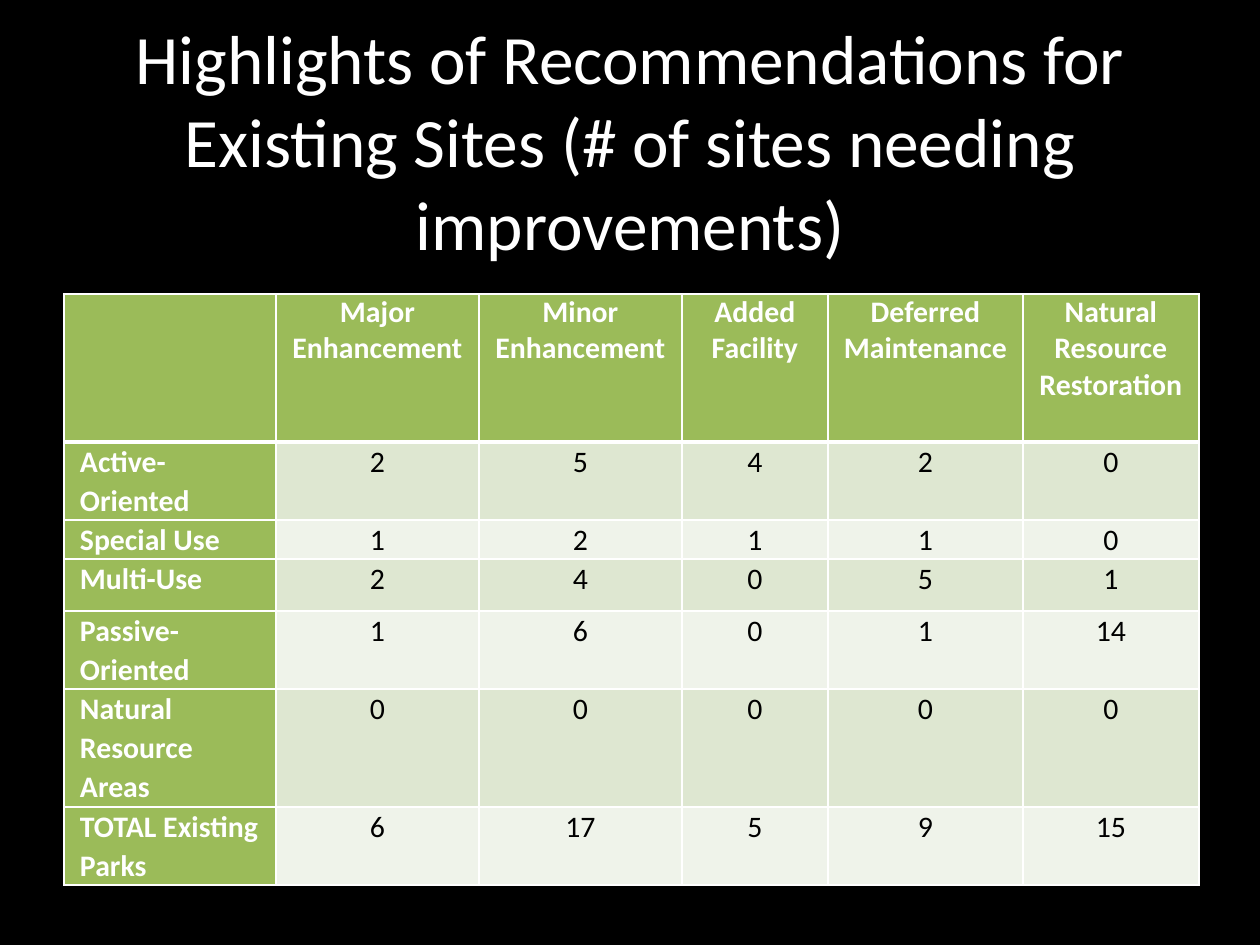
import pptx
import pptx.util
import pptx.dml.color
import pptx.enum.text
import pptx.oxml
import pptx.oxml.ns

RGBColor = pptx.dml.color.RGBColor
BLACK = RGBColor(0x00, 0x00, 0x00)
WHITE = RGBColor(0xFF, 0xFF, 0xFF)
GREEN = RGBColor(0x9B, 0xBB, 0x59)
BANDS = [RGBColor(0xDE, 0xE7, 0xD1), RGBColor(0xEF, 0xF3, 0xEA)]

LEFT = pptx.enum.text.PP_ALIGN.LEFT
CENTER = pptx.enum.text.PP_ALIGN.CENTER
MIDDLE = pptx.enum.text.MSO_ANCHOR.MIDDLE
NO_AUTOFIT = pptx.enum.text.MSO_AUTO_SIZE.NONE

PX = 914400 // 126
COL_WIDTHS = [212, 203, 203, 146, 195, 176]
ROW_HEIGHTS = [148, 78, 39, 52, 78, 118, 78]
ROWS = [
    ["", "Major Enhancement", "Minor Enhancement", "Added Facility",
     "Deferred Maintenance", "Natural Resource Restoration"],
    ["Active-Oriented", 2, 5, 4, 2, 0],
    ["Special Use", 1, 2, 1, 1, 0],
    ["Multi-Use", 2, 4, 0, 5, 1],
    ["Passive-Oriented", 1, 6, 0, 1, 14],
    ["Natural Resource Areas", 0, 0, 0, 0, 0],
    ["TOTAL Existing Parks", 6, 17, 5, 9, 15],
]


def px(n):
    return pptx.util.Emu(n * PX)


def write(tf, text, size=17, color=BLACK, bold=False, align=CENTER, spacing=None):
    p = tf.paragraphs[0]
    p.alignment = align
    if spacing:
        p.line_spacing = spacing
    r = p.add_run()
    r.text = text
    r.font.name = "Calibri"
    r.font.size = pptx.util.Pt(size)
    r.font.bold = bold
    r.font.color.rgb = color


def add_border(cell, side, width):
    ns = pptx.oxml.ns.nsdecls("a")
    cell._tc.get_or_add_tcPr().append(pptx.oxml.parse_xml(
        f'<a:ln{side} {ns} w="{pptx.util.Pt(width)}"><a:solidFill>'
        f'<a:srgbClr val="{WHITE}"/></a:solidFill></a:ln{side}>'))


class Deck:
    def __init__(self):
        self.prs = pptx.Presentation()
        self.prs.slide_width = px(1260)
        self.prs.slide_height = px(945)

    def add_slide(self):
        self.s = self.prs.slides.add_slide(self.prs.slide_layouts[5])
        fill = self.s.background.fill
        fill.solid()
        fill.fore_color.rgb = BLACK

    def title(self, text, x, y, w, h):
        sp = self.s.shapes.title
        sp.left, sp.top, sp.width, sp.height = map(px, (x, y, w, h))
        tf = sp.text_frame
        tf.word_wrap = True
        tf.auto_size = NO_AUTOFIT
        tf.vertical_anchor = MIDDLE
        write(tf, text, size=39.6, color=WHITE)

    def table(self, rows, x, y, widths, heights):
        table = self.s.shapes.add_table(
            len(rows), len(widths), px(x), px(y),
            px(sum(widths)), px(sum(heights))).table
        for col, w in zip(table.columns, widths):
            col.width = px(w)
        for row, h in zip(table.rows, heights):
            row.height = px(h)
        for i, values in enumerate(rows):
            for j, value in enumerate(values):
                self.cell(table.cell(i, j), str(value), i, j)

    def cell(self, cell, text, i, j):
        heading = i == 0 or j == 0
        cell.margin_left = cell.margin_right = px(16)
        cell.margin_top = cell.margin_bottom = 0
        add_border(cell, "L", 1)
        add_border(cell, "R", 1)
        add_border(cell, "T", 3 if i == 1 else 1)
        add_border(cell, "B", 3 if i == 0 else 1)
        cell.fill.solid()
        cell.fill.fore_color.rgb = GREEN if heading else BANDS[(i - 1) % 2]
        if text:
            write(cell.text_frame, text, bold=heading,
                  color=WHITE if heading else BLACK,
                  align=LEFT if j == 0 else CENTER,
                  spacing=1.07 if i else None)


def main():
    deck = Deck()
    deck.add_slide()
    deck.title("Highlights of Recommendations for Existing Sites "
               "(# of sites needing improvements)", 63, 38, 1134, 204)
    deck.table(ROWS, 64, 294, COL_WIDTHS, ROW_HEIGHTS)
    deck.prs.save("out.pptx")


if __name__ == "__main__":
    main()
